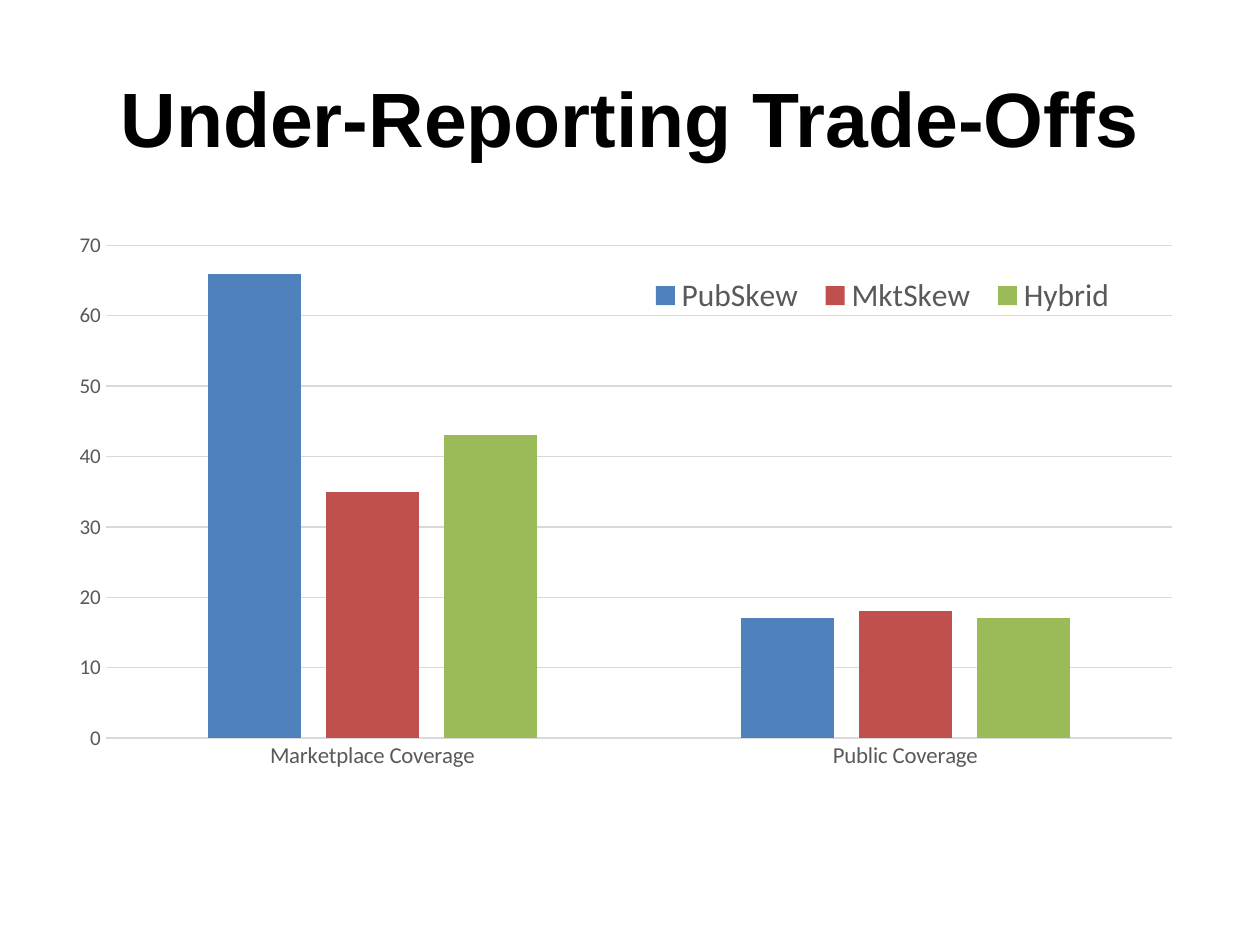
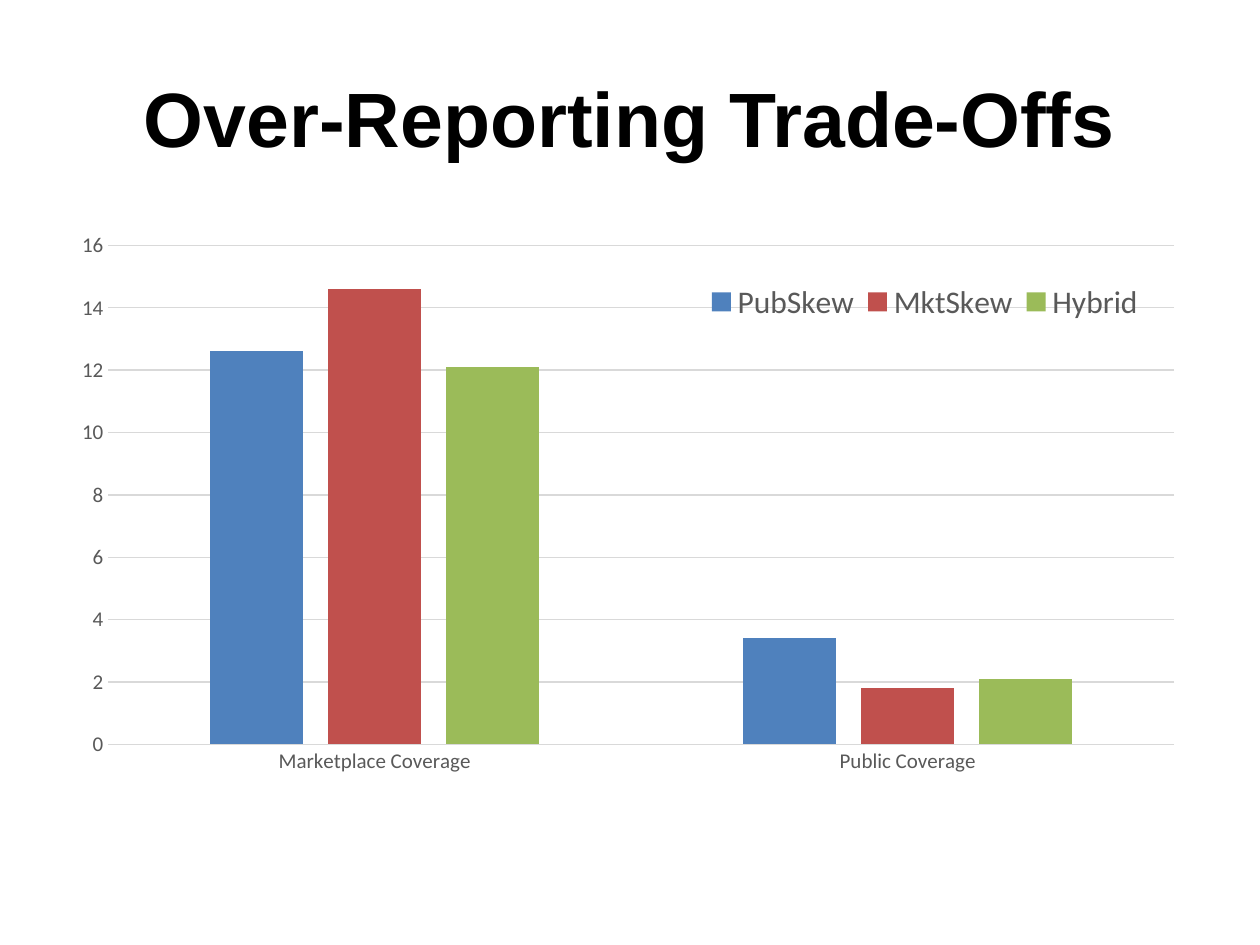
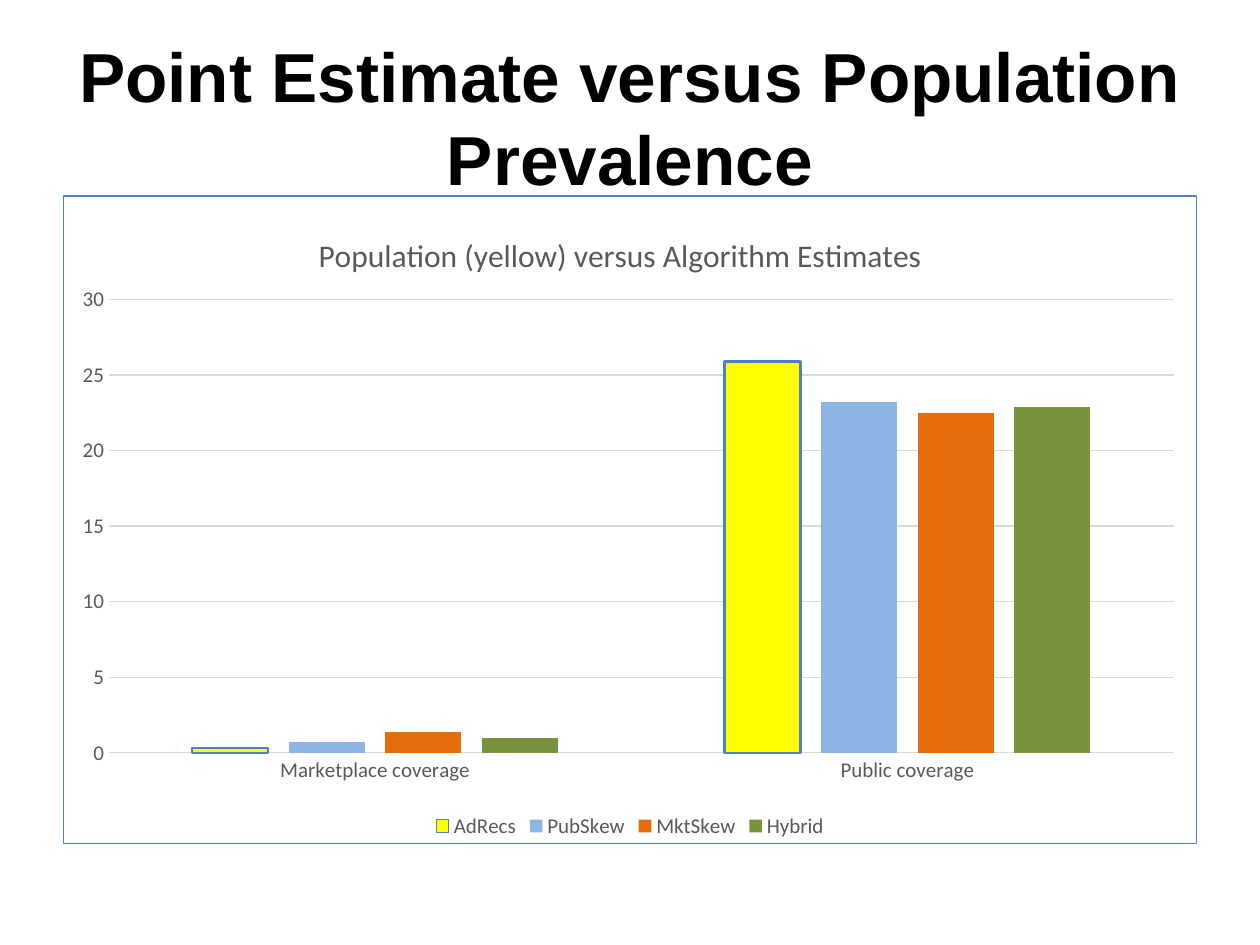
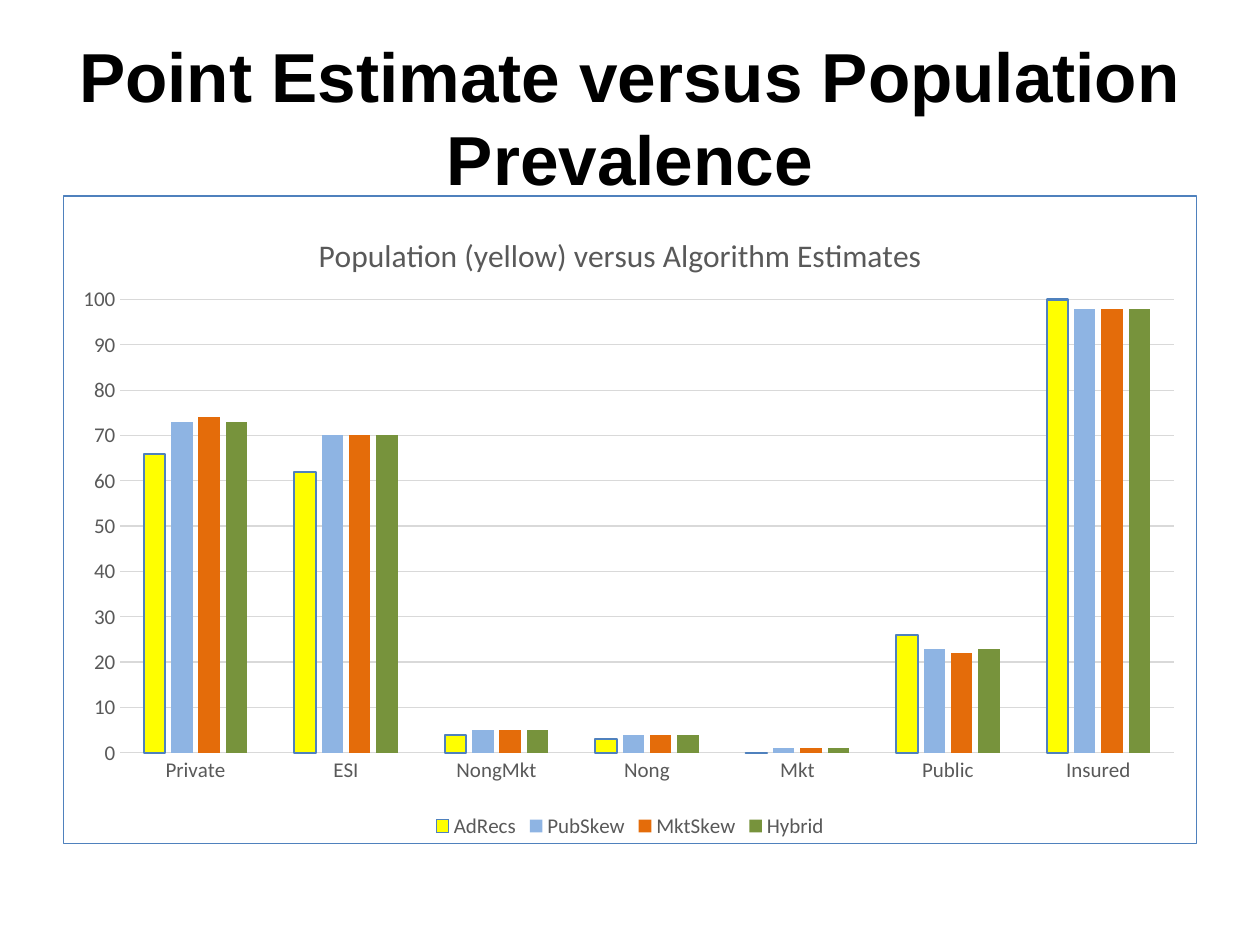
"""Four slides of clustered columns comparing coverage algorithms."""
from lxml import etree
from pptx import Presentation
from pptx import util as u
from pptx.chart.data import CategoryChartData
from pptx.dml.color import RGBColor
from pptx.enum import chart as ch
from pptx.enum import text
from pptx.oxml import parse_xml
from pptx.oxml.ns import nsdecls, qn

BLACK = RGBColor(0x00, 0x00, 0x00)
GRAY = RGBColor(0x59, 0x59, 0x59)
GRID = RGBColor(0xD9, 0xD9, 0xD9)
BLUE = RGBColor(0x4F, 0x81, 0xBD)
RED = RGBColor(0xC0, 0x50, 0x4D)
GREEN = RGBColor(0x9B, 0xBB, 0x59)
YELLOW = RGBColor(0xFF, 0xFF, 0x00)
SKY = RGBColor(0x8E, 0xB4, 0xE3)
ORANGE = RGBColor(0xE4, 0x6C, 0x0A)
OLIVE = RGBColor(0x77, 0x93, 0x3C)

TRADE_OFF_COLORS = {"PubSkew": BLUE, "MktSkew": RED, "Hybrid": GREEN}
ESTIMATE_COLORS = {"AdRecs": YELLOW, "PubSkew": SKY, "MktSkew": ORANGE, "Hybrid": OLIVE}
OUTLINED = "AdRecs"

TRADE_OFF = dict(colors=TRADE_OFF_COLORS, title_size=44, top=1.75, legend_size=18,
                 categories=["Marketplace Coverage", "Public Coverage"])
ESTIMATE = dict(colors=ESTIMATE_COLORS, title_size=39.6, top=1.55, legend_size=12, left=0.5,
                title="Point Estimate versus Population Prevalence",
                heading="Population (yellow) versus Algorithm Estimates",
                category_size=12, legend=None)

SLIDES = [
    dict(TRADE_OFF, title="Under-Reporting Trade-Offs", heading=None, left=0.48,
         category_size=13, scale=(70, 10),
         plot=(0.04, 0.04, 0.94, 0.79), legend=(0.51, 0.09, 0.43, 0.06),
         values=[(66, 17), (35, 18), (43, 17)]),
    dict(TRADE_OFF, title="Over-Reporting Trade-Offs", heading=None, left=0.5,
         category_size=12, scale=(16, 2),
         plot=(0.04, 0.04, 0.94, 0.8), legend=(0.56, 0.1, 0.4, 0.06),
         values=[(12.6, 3.4), (14.6, 1.8), (12.1, 2.1)]),
    dict(ESTIMATE, categories=["Marketplace coverage", "Public coverage"], scale=(30, 5),
         plot=(0.04, 0.16, 0.94, 0.7),
         values=[(0.3, 25.9), (0.7, 23.2), (1.4, 22.5), (1, 22.9)]),
    dict(ESTIMATE, categories=["Private", "ESI", "NongMkt", "Nong", "Mkt", "Public", "Insured"],
         scale=(100, 10), plot=(0.05, 0.16, 0.93, 0.7),
         values=[(66, 62, 4, 3, 0, 26, 100), (73, 70, 5, 4, 1, 23, 98),
                 (74, 70, 5, 4, 1, 22, 98), (73, 70, 5, 4, 1, 23, 98)]),
]

WIDTH, HEIGHT = 10, 7.5
MARGIN = 0.5
TITLE_TOP, TITLE_HEIGHT = 0.3, 1.25
CHART_WIDTH = WIDTH - 2 * MARGIN
CHART_BOTTOM = 6.7


def set_font(font, size, color=GRAY, name="Calibri", bold=False):
    font.name, font.size, font.bold = name, u.Pt(size), bold
    font.color.rgb = color


def put_text(frame, words, **style):
    frame.text = words
    paragraph = frame.paragraphs[0]
    paragraph.alignment = text.PP_ALIGN.CENTER
    set_font(paragraph.runs[0].font, **style)


def set_line(line, color, width=0.75):
    line.color.rgb = color
    line.width = u.Pt(width)


def lay_out(part, shares, inner=False):
    layout = part.find(qn("c:layout"))
    if layout is None:
        layout = parse_xml(f"<c:layout {nsdecls('c')}/>")
        overlay = part.find(qn("c:overlay"))
        if overlay is None:
            part.insert(0, layout)
        else:
            overlay.addprevious(layout)
    manual = etree.SubElement(layout, qn("c:manualLayout"))
    settings = [("layoutTarget", "inner")] if inner else []
    settings += [("xMode", "edge"), ("yMode", "edge"), *zip("xywh", shares)]
    for tag, value in settings:
        etree.SubElement(manual, qn(f"c:{tag}")).set("val", str(value))


def add_border(chart, color, width=0.75):
    border = parse_xml(
        f'<c:spPr {nsdecls("c", "a")}><a:noFill/><a:ln w="{u.Pt(width)}">'
        f'<a:solidFill><a:srgbClr val="{color}"/></a:solidFill></a:ln></c:spPr>')
    chart.element.find(qn("c:txPr")).addprevious(border)


def style_axes(chart, category_size, scale):
    for axis, size in ((chart.category_axis, category_size), (chart.value_axis, 12)):
        axis.major_tick_mark = axis.minor_tick_mark = ch.XL_TICK_MARK.NONE
        set_font(axis.tick_labels.font, size)
    set_line(chart.category_axis.format.line, GRID)
    amounts = chart.value_axis
    amounts.minimum_scale = 0
    amounts.maximum_scale, amounts.major_unit = scale
    amounts.format.line.fill.background()
    amounts.has_major_gridlines = True
    set_line(amounts.major_gridlines.format.line, GRID)
    amounts.tick_labels.number_format = "0"
    amounts.tick_labels.number_format_is_linked = False


def style_columns(chart, colors):
    columns = chart.plots[0]
    columns.gap_width, columns.overlap = 219, -27
    columns.vary_by_categories = False
    for series in columns.series:
        series.format.fill.solid()
        series.format.fill.fore_color.rgb = colors[series.name]
        series.invert_if_negative = False
        if series.name == OUTLINED:
            set_line(series.format.line, BLUE, 1.25)


def add_columns(slide, content):
    data = CategoryChartData()
    data.categories = content["categories"]
    for name, values in zip(content["colors"], content["values"]):
        data.add_series(name, values)
    top = content["top"]
    box = [u.Inches(n) for n in (content["left"], top, CHART_WIDTH, CHART_BOTTOM - top)]
    chart = slide.shapes.add_chart(ch.XL_CHART_TYPE.COLUMN_CLUSTERED, *box, data).chart
    set_font(chart.font, 10, BLACK)
    style_axes(chart, content["category_size"], content["scale"])
    style_columns(chart, content["colors"])
    lay_out(chart.element.find(".//" + qn("c:plotArea")), content["plot"], inner=True)

    chart.has_legend = True
    chart.legend.position = ch.XL_LEGEND_POSITION.BOTTOM
    chart.legend.include_in_layout = False
    set_font(chart.legend.font, content["legend_size"])
    if content["legend"]:
        lay_out(chart.element.find(".//" + qn("c:legend")), content["legend"])

    chart.has_title = bool(content["heading"])
    if content["heading"]:
        put_text(chart.chart_title.text_frame, content["heading"], size=18)
        lay_out(chart.element.find(".//" + qn("c:title")), (0.22, 0.05))
        add_border(chart, BLUE)


def add_title(slide, words, size):
    title = slide.shapes.title
    title.left, title.top = u.Inches(MARGIN), u.Inches(TITLE_TOP)
    title.width, title.height = u.Inches(CHART_WIDTH), u.Inches(TITLE_HEIGHT)
    frame = title.text_frame
    frame.auto_size = text.MSO_AUTO_SIZE.NONE
    frame.word_wrap = True
    frame.vertical_anchor = text.MSO_ANCHOR.MIDDLE
    put_text(frame, words, size=size, color=BLACK, name="Arial", bold=True)


def main():
    deck = Presentation()
    deck.slide_width, deck.slide_height = u.Inches(WIDTH), u.Inches(HEIGHT)
    title_only = deck.slide_layouts.get_by_name("Title Only")
    for content in SLIDES:
        slide = deck.slides.add_slide(title_only)
        add_title(slide, content["title"], content["title_size"])
        add_columns(slide, content)
    deck.save("out.pptx")


if __name__ == "__main__":
    main()
